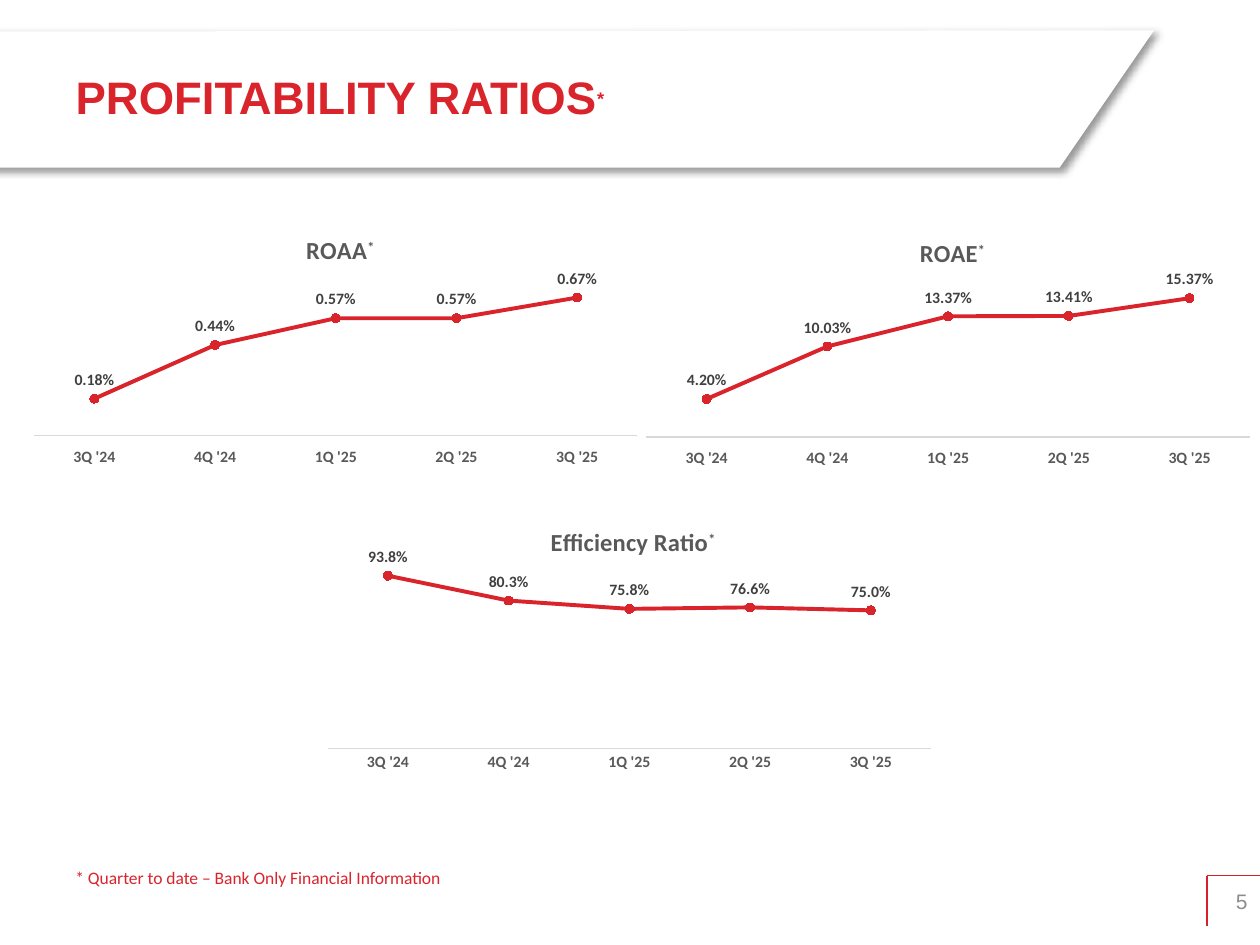
from lxml import etree
from pptx import Presentation
from pptx.chart.data import CategoryChartData
from pptx.dml.color import RGBColor
from pptx.enum.chart import XL_CHART_TYPE, XL_LABEL_POSITION, XL_MARKER_STYLE, XL_TICK_LABEL_POSITION, XL_TICK_MARK
from pptx.enum.text import MSO_ANCHOR, PP_ALIGN
from pptx.oxml import parse_xml
from pptx.oxml.ns import nsdecls, qn
from pptx.util import Inches, Pt

LINE_MARKERS = XL_CHART_TYPE.LINE_MARKERS
ABOVE = XL_LABEL_POSITION.ABOVE
CIRCLE = XL_MARKER_STYLE.CIRCLE
LOW = XL_TICK_LABEL_POSITION.LOW
NEXT_TO_AXIS = XL_TICK_LABEL_POSITION.NEXT_TO_AXIS
NO_TICK = XL_TICK_MARK.NONE
MIDDLE = MSO_ANCHOR.MIDDLE
LEFT, RIGHT = PP_ALIGN.LEFT, PP_ALIGN.RIGHT

RED = RGBColor(0xD9, 0x24, 0x2C)
CORNER_RED = RGBColor(0xD9, 0x1F, 0x27)
MARKER_RED = RGBColor(0xFF, 0x00, 0x00)
WHITE = RGBColor(0xFF, 0xFF, 0xFF)
BLACK = RGBColor(0x00, 0x00, 0x00)
DARK_GRAY = RGBColor(0x40, 0x40, 0x40)
GRAY = RGBColor(0x59, 0x59, 0x59)
NUMBER_GRAY = RGBColor(0x8C, 0x8C, 0x8C)
AXIS_GRAY = RGBColor(0xD9, 0xD9, 0xD9)


def style_font(font, name, size, color, bold=False):
    font.name = name
    font.size = Pt(size)
    font.bold = bold
    font.color.rgb = color


def manual_layout(target, x, y, width=None, height=None):
    size = "" if width is None else f'<c:w val="{width:.3f}"/><c:h val="{height:.3f}"/>'
    inner = "" if width is None else '<c:layoutTarget val="inner"/>'
    layout = parse_xml(
        f'<c:layout {nsdecls("c")}><c:manualLayout>{inner}<c:xMode val="edge"/><c:yMode val="edge"/>'
        f'<c:x val="{x:.3f}"/><c:y val="{y:.3f}"/>{size}</c:manualLayout></c:layout>')
    for old in target.findall(qn("c:layout")):
        target.remove(old)
    text = target.find(qn("c:tx"))
    target.insert(0 if text is None else 1, layout)


prs = Presentation()
prs.slide_width, prs.slide_height = Inches(10), Inches(7.5)
slide = prs.slides.add_slide(prs.slide_layouts[5])
shapes = slide.shapes

outline = shapes.build_freeform(Inches(-0.17), Inches(0.25))
outline.add_line_segments(
    [(Inches(x), Inches(y)) for x, y in [(9.16, 0.24), (8.41, 1.33), (-0.17, 1.33)]], close=True)
banner = outline.convert_to_shape()
banner.fill.solid()
banner.fill.fore_color.rgb = WHITE
banner.line.fill.background()
banner._element.spPr.append(parse_xml(
    f'<a:effectLst {nsdecls("a")}><a:outerShdw blurRad="{Pt(4)}" dist="{Pt(3)}" dir="2700000" algn="tl" '
    'rotWithShape="0"><a:srgbClr val="000000"><a:alpha val="40000"/></a:srgbClr></a:outerShdw></a:effectLst>'))

title = shapes.title
slide.shapes._spTree.append(title._element)
title.left, title.top, title.width, title.height = Inches(0.5), Inches(0.25), Inches(7.92), Inches(1.03)
title.text_frame.vertical_anchor = MIDDLE
heading = title.text_frame.paragraphs[0]
heading.alignment = LEFT
for text, size in [("PROFITABILITY RATIOS", 26), ("*", 18)]:
    run = heading.add_run()
    run.text = text
    style_font(run.font, "Arial", size, RED, True)
run.font._element.set("baseline", "30000")

for x, y in [(9.58, 7.35), (10, 6.95)]:
    corner = shapes.add_connector(1, Inches(9.58), Inches(6.95), Inches(x), Inches(y))
    corner.line.color.rgb = CORNER_RED
    corner.line.width = Pt(0.75)
    etree.SubElement(corner._element.spPr, qn("a:effectLst"))

page_number = shapes.add_textbox(Inches(9.58), Inches(6.95), Inches(0.42), Inches(0.4)).text_frame
page_number.word_wrap = True
page_number.vertical_anchor = MIDDLE
number = page_number.paragraphs[0]
number.text = "5"
number.alignment = RIGHT
style_font(number.font, "Arial", 12, NUMBER_GRAY)

quarters = ["3Q '24", "4Q '24", "1Q '25", "2Q '25", "3Q '25"]
ratios = [
    ("ROAA", (0.17, 1.68, 2.07), (0.0018, 0.0044, 0.0057, 0.0057, 0.0067), "0.00%", 0.008,
     LOW, RED, 2.23, (2.15, 3.46)),
    ("ROAE", (5.03, 1.71, 2.05), (0.042, 0.1003, 0.1337, 0.1341, 0.1537), "0.00%", 0.18,
     LOW, MARKER_RED, 2.24, (2.18, 3.47)),
    ("Efficiency Ratio", (2.5, 4, 2.17), (0.938, 0.803, 0.758, 0.766, 0.75), "0.0%", 1,
     NEXT_TO_AXIS, RED, 1.84, (4.48, 5.94)),
]
chart_width = 5
for name, (left, top, height), values, percent, maximum, label_side, marker_color, title_x, plot_y in ratios:
    data = CategoryChartData(number_format=percent)
    data.categories = quarters
    data.add_series("Series 1", values)
    chart = shapes.add_chart(
        LINE_MARKERS, Inches(left), Inches(top), Inches(chart_width), Inches(height), data).chart
    style_font(chart.font, "Calibri", 10, BLACK)
    chart.has_legend = False

    chart.has_title = True
    caption = chart.chart_title.text_frame.paragraphs[0]
    for text in (name, "*"):
        run = caption.add_run()
        run.text = text
        style_font(run.font, "Calibri", 14, GRAY, True)
    run.font._element.set("baseline", "30000")
    chart.chart_title.include_in_layout = False
    manual_layout(chart.chart_title._element, title_x / chart_width, 0.14 / height)
    plot_top, plot_bottom = plot_y
    manual_layout(chart._chartSpace.chart.plotArea, 0.1 / chart_width, (plot_top - top) / height,
                  4.79 / chart_width, (plot_bottom - plot_top) / height)

    quarter_axis = chart.category_axis
    quarter_axis.major_tick_mark = quarter_axis.minor_tick_mark = NO_TICK
    quarter_axis.tick_label_position = label_side
    quarter_axis.format.line.color.rgb = AXIS_GRAY
    quarter_axis.format.line.width = Pt(0.75)
    style_font(quarter_axis.tick_labels.font, "Calibri", 9, GRAY, True)
    ratio_axis = chart.value_axis
    ratio_axis.minimum_scale, ratio_axis.maximum_scale = 0, maximum
    ratio_axis.has_major_gridlines = False
    ratio_axis.tick_labels.number_format = percent
    ratio_axis.tick_labels.number_format_is_linked = False
    ratio_axis.visible = False

    plot = chart.plots[0]
    plot.vary_by_categories = False
    series = plot.series[0]
    series.smooth = False
    series.format.line.color.rgb = RED
    series.format.line.width = Pt(2.25)
    series.marker.style = CIRCLE
    series.marker.size = 5
    series.marker.format.fill.solid()
    series.marker.format.fill.fore_color.rgb = marker_color
    series.marker.format.line.color.rgb = RED
    labels = series.data_labels
    labels.show_value = True
    labels.position = ABOVE
    labels.number_format = percent
    labels.number_format_is_linked = False
    style_font(labels.font, "Calibri", 9, DARK_GRAY, True)

footnote = shapes.add_textbox(Inches(0.5), Inches(6.83), Inches(3.18), Inches(0.27)).text_frame
footnote.word_wrap = False
note = footnote.paragraphs[0]
note.text = "* Quarter to date – Bank Only Financial Information"
style_font(note.font, "Calibri", 10, RED)

prs.save("out.pptx")
